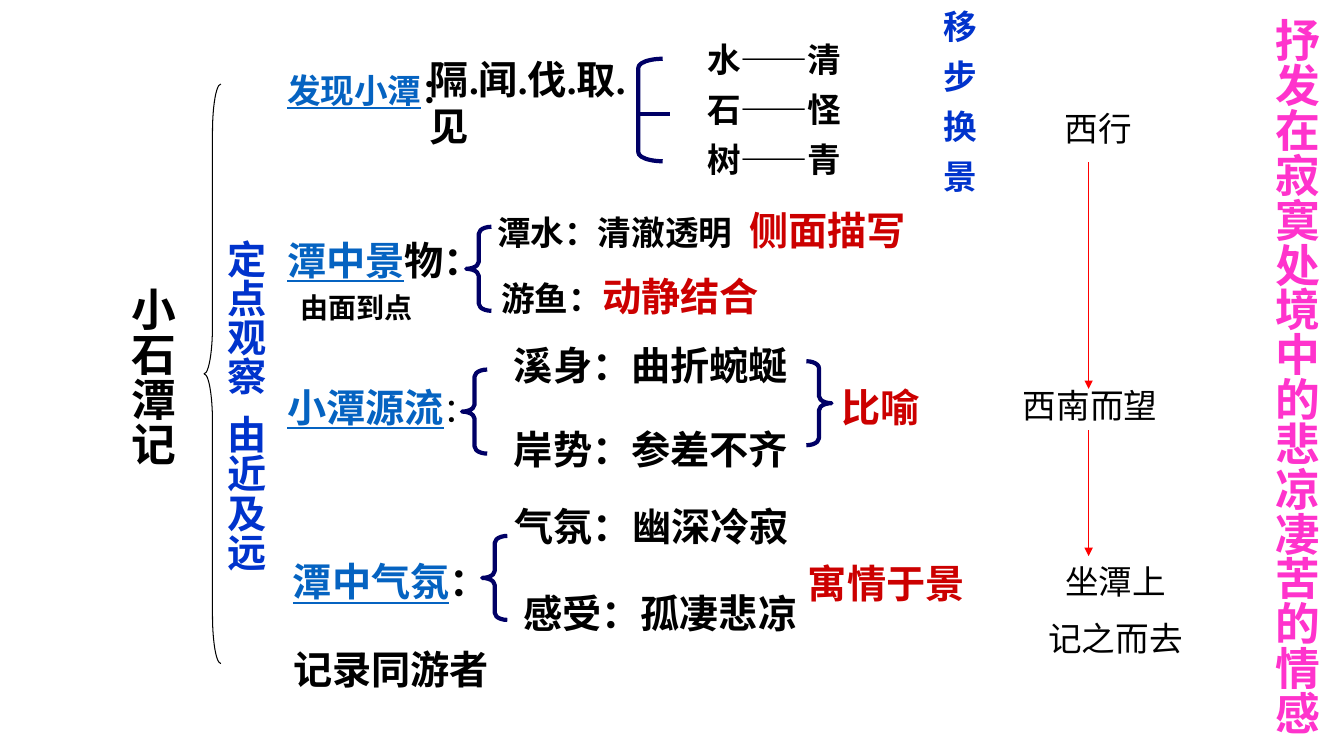
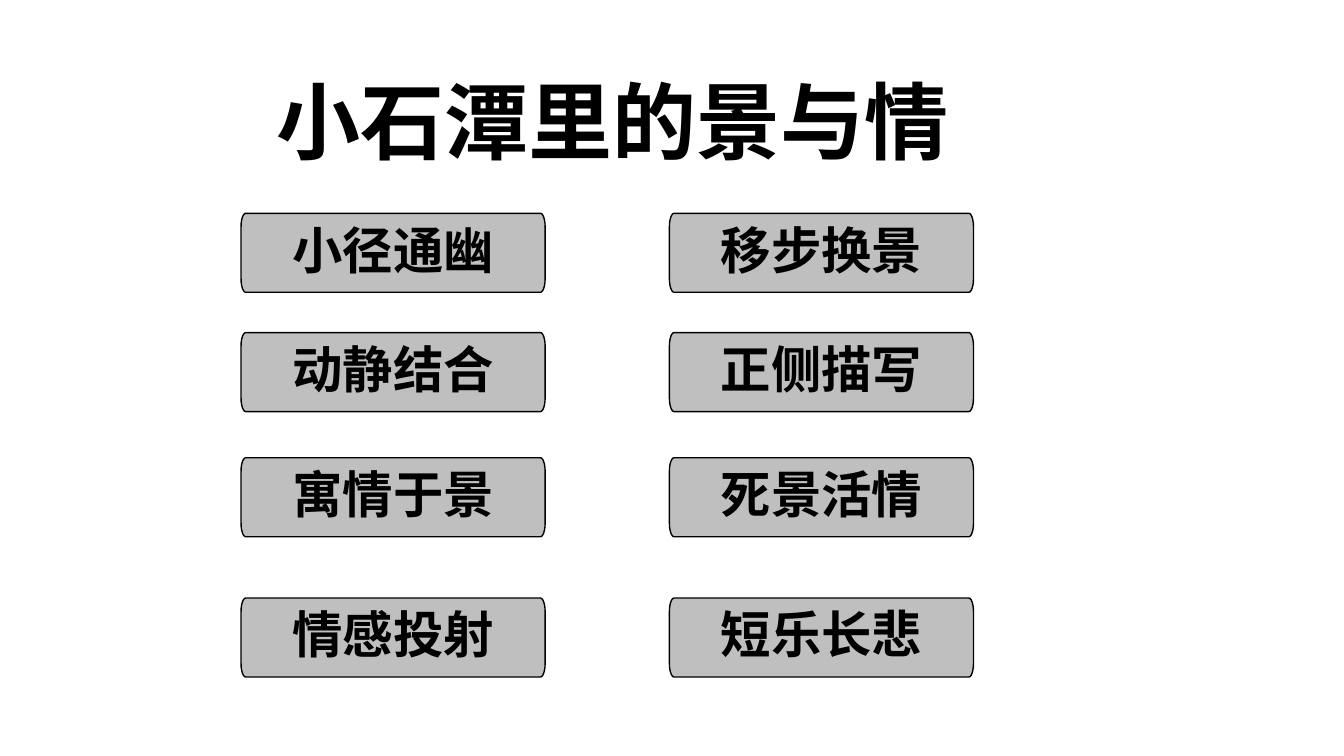
from dataclasses import dataclass
from math import cos, pi, sin

from lxml.etree import SubElement
from pptx import Presentation
from pptx.dml.color import RGBColor
from pptx.enum.shapes import MSO_CONNECTOR, MSO_SHAPE
from pptx.enum.text import MSO_ANCHOR, MSO_AUTO_SIZE, PP_ALIGN
from pptx.oxml.ns import qn
from pptx.slide import Slide
from pptx.util import Emu, Inches, Pt

# Slide size and grid: 160 columns by 90 rows
WIDTH, HEIGHT = Inches(13.333), Inches(7.5)
COL, ROW = WIDTH / 160, HEIGHT / 90

BLACK = RGBColor(0x00, 0x00, 0x00)
LINK = RGBColor(0x05, 0x63, 0xC1)
NAVY = RGBColor(0x00, 0x00, 0x66)
BLUE = RGBColor(0x00, 0x33, 0xCC)
DARK_RED = RGBColor(0xCC, 0x00, 0x00)
RED = RGBColor(0xFF, 0x00, 0x00)
PINK = RGBColor(0xFF, 0x33, 0xCC)
GREY = RGBColor(0xBF, 0xBF, 0xBF)

SERIF, SANS, CARD_FONT, TITLE_FONT = "Times New Roman", "Arial", "Calibri", "Noto Sans CJK JP"


@dataclass(frozen=True)
class Run:
    """A stretch of text; None keeps the paragraph's setting."""
    text: str
    color: RGBColor | None = None
    size: float | None = None
    font: str | None = None
    bold: bool | None = None
    underline: bool | None = None
    spacing: float = 0


@dataclass(frozen=True)
class Label:
    """A text box in grid columns and rows; each line is a list of runs."""
    col: float
    row: float
    cols: float
    rows: float
    lines: list[list[Run]]
    size: float = 28
    color: RGBColor = BLACK
    font: str = SERIF
    bold: bool = True
    align: PP_ALIGN = PP_ALIGN.LEFT
    vertical: bool = False
    wrap: bool = True


@dataclass(frozen=True)
class Bracket:
    kind: MSO_SHAPE
    col: float
    row: float
    cols: float = 3
    rows: float = 10
    bend: float = 0.278
    color: RGBColor = NAVY
    weight: float = 3


@dataclass(frozen=True)
class Line:
    col: float
    row: float
    end_col: float
    end_row: float
    color: RGBColor
    weight: float
    arrow: bool = False


@dataclass(frozen=True)
class Card:
    col: float
    row: float
    text: str


def x(cols: float) -> Emu:
    return Emu(round(cols * COL))


def y(rows: float) -> Emu:
    return Emu(round(rows * ROW))


def one(text: str, **style) -> list[list[Run]]:
    return [[Run(text, **style)]]


def link(text: str, rest: Run) -> list[list[Run]]:
    return [[Run(text, color=LINK, underline=True), rest]]


def add_label(s: Slide, label: Label) -> None:
    sp = s.shapes.add_textbox(x(label.col), y(label.row), x(label.cols), y(label.rows))
    tf = sp.text_frame
    tf.word_wrap = label.wrap
    tf.auto_size = MSO_AUTO_SIZE.SHAPE_TO_FIT_TEXT
    if label.vertical:
        tf._txBody.bodyPr.set("vert", "eaVert")
    for i, line in enumerate(label.lines):
        p = tf.add_paragraph() if i else tf.paragraphs[0]
        p.alignment = label.align
        if i:
            p.space_before = Pt(label.size / 2)
        p.font.name, p.font.size, p.font.bold = label.font, Pt(label.size), label.bold
        p.font.color.rgb = label.color
        for run in line:
            add_run(p, run)


def add_run(p, run: Run) -> None:
    r = p.add_run()
    r.text = run.text
    if run.color is not None:
        r.font.color.rgb = run.color
    if run.size is not None:
        r.font.size = Pt(run.size)
    if run.font is not None:
        r.font.name = run.font
    if run.bold is not None:
        r.font.bold = run.bold
    if run.underline is not None:
        r.font.underline = run.underline
    if run.spacing:
        r.font._element.set("spc", str(round(run.spacing * 100)))


def add_bracket(s: Slide, b: Bracket) -> None:
    sp = s.shapes.add_shape(b.kind, x(b.col), y(b.row), x(b.cols), y(b.rows))
    sp.adjustments[0] = b.bend
    sp.shadow.inherit = False
    sp.fill.background()
    sp.line.color.rgb, sp.line.width = b.color, Pt(b.weight)


def add_line(s: Slide, line: Line) -> None:
    c = s.shapes.add_connector(MSO_CONNECTOR.STRAIGHT, x(line.col), y(line.row),
                               x(line.end_col), y(line.end_row))
    c.line.color.rgb, c.line.width = line.color, Pt(line.weight)
    if line.arrow:
        SubElement(c.line._get_or_add_ln(), qn("a:tailEnd"), type="triangle")
    SubElement(c._element.spPr, qn("a:effectLst"))


def add_card(s: Slide, card: Card) -> None:
    # Corners are quarter ellipses, taller than they are wide
    w, h, rx, ry, steps = 36.2, 9.4, 0.55, 1.6, 6
    corners = [(rx, ry, pi), (w - rx, ry, 1.5 * pi), (w - rx, h - ry, 0), (rx, h - ry, pi / 2)]
    points = []
    for cx, cy, start in corners:
        for i in range(steps + 1):
            angle = start + i * pi / 2 / steps
            points.append((x(card.col + cx + rx * cos(angle)), y(card.row + cy + ry * sin(angle))))
    builder = s.shapes.build_freeform(*points[0])
    builder.add_line_segments(points[1:], close=True)
    sp = builder.convert_to_shape()
    sp.shadow.inherit = False
    sp.fill.solid()
    sp.fill.fore_color.rgb = GREY
    sp.line.color.rgb, sp.line.width = BLACK, Pt(1)
    tf = sp.text_frame
    tf.word_wrap = True
    tf.vertical_anchor = MSO_ANCHOR.MIDDLE
    tf.margin_left = tf.margin_right = tf.margin_top = tf.margin_bottom = Inches(0.14)
    p = tf.paragraphs[0]
    p.alignment, p.line_spacing = PP_ALIGN.CENTER, 0.9
    p.font.name, p.font.size, p.font.bold = CARD_FONT, Pt(36), True
    p.font.color.rgb = BLACK
    add_run(p, Run(card.text))


# Slide 1: outline of the essay
LABELS = [
    # Vertical headings
    Label(13, 33, 8.9, 33, one("小石潭记"), size=32, vertical=True),
    Label(24.7, 27.4, 8, 48, [[Run("定点观察"), Run(" ", spacing=7), Run("由近及远")]],
          color=BLUE, vertical=True),
    Label(109.9, 0, 7.3, 27.8, one("移步换景", spacing=11.8), size=24, color=BLUE, vertical=True),
    Label(149.2, 1, 8.9, 86, one("抒发在寂寞处境中的悲凉凄苦的情感"),
          size=32, color=PINK, font=SANS, vertical=True, wrap=False),
    # Sections
    Label(33, 7.7, 30, 6, link("发现小潭", Run("：")), size=24),
    Label(33, 27.5, 26.2, 6.8, link("潭中景", Run("物："))),
    Label(34.6, 34, 16, 5.3, one("由面到点"), size=20, font=CARD_FONT),
    Label(33, 45, 28, 6.8, link("小潭源流", Run("：", size=24, bold=False))),
    Label(33.7, 65.8, 28.3, 6.8, link("潭中气氛", Run("："))),
    Label(33.7, 76.2, 44, 6.8, one("记录同游者")),
    # Details
    Label(50, 6, 26.4, 12.4, one("隔.闻.伐.取.见")),
    Label(58, 24.6, 35, 6, one("潭水：清澈透明"), size=24),
    Label(58.5, 31.8, 46, 6.8, [[Run("游鱼：", size=24), Run("动静结合", color=DARK_RED)]]),
    Label(60, 40, 37, 6.8, one("溪身：曲折蜿蜒")),
    Label(60, 50, 37, 6.8, one("岸势：参差不齐")),
    Label(60.1, 59.2, 42, 6.8, one("气氛：幽深冷寂")),
    Label(61.1, 69.6, 36, 6.8, [[Run("感受："), Run("孤凄悲凉", font=SANS)]]),
    *(Label(83, 4 + 6 * i, 22, 6, one(text), size=24)
      for i, text in enumerate(["水——清", "石——怪", "树——青"])),
    # Techniques
    Label(88, 24, 25, 6.8, one("侧面描写"), color=DARK_RED),
    Label(99, 45, 19, 6.8, one("比喻"), color=DARK_RED),
    Label(95, 66, 22, 6.8, one("寓情于景"), color=DARK_RED),
    # Route
    Label(125.6, 12.2, 13, 6, one("西行"), size=24, font=SANS, bold=False),
    Label(120.6, 45.2, 21, 6, one("西南而望"), size=24, font=SANS, bold=False),
    Label(122.3, 66.2, 21, 13.3, [[Run("坐潭上")], [Run("记之而去")]],
          size=24, font=SANS, bold=False, align=PP_ALIGN.CENTER),
]
BRACKETS = [
    Bracket(MSO_SHAPE.LEFT_BRACE, 24.3, 10, 2, 69, bend=2.875, color=BLACK, weight=0.75),
    Bracket(MSO_SHAPE.LEFT_BRACKET, 76, 7, 2.9, 12.2, bend=0.362),
    Bracket(MSO_SHAPE.LEFT_BRACE, 55.5, 27),
    Bracket(MSO_SHAPE.LEFT_BRACE, 55, 44),
    Bracket(MSO_SHAPE.LEFT_BRACE, 57.4, 63.8),
    Bracket(MSO_SHAPE.RIGHT_BRACE, 96, 43),
]
LINES = [
    Line(76, 13.6, 79.8, 13.6, NAVY, 3),
    Line(129.6, 19.3, 129.6, 46.3, RED, 0.75, arrow=True),
    Line(129.6, 51.2, 129.6, 66.2, RED, 0.75, arrow=True),
]

# Slide 2: scenery and feeling
TITLE = Label(31.7, 7.7, 84.2, 13.3, one("小石潭里的景与情"), size=60, font=TITLE_FONT)
CARD_COLS = (28.7, 79.7)
CARD_ROWS = {
    25.4: ("小径通幽", "移步换景"),
    39.6: ("动静结合", "正侧描写"),
    54.5: ("寓情于景", "死景活情"),
    71.2: ("情感投射", "短乐长悲"),
}


def main() -> None:
    prs = Presentation()
    prs.slide_width, prs.slide_height = WIDTH, HEIGHT
    blank = prs.slide_layouts[6]

    s = prs.slides.add_slide(blank)
    for bracket in BRACKETS:
        add_bracket(s, bracket)
    for line in LINES:
        add_line(s, line)
    for label in LABELS:
        add_label(s, label)

    s = prs.slides.add_slide(blank)
    add_label(s, TITLE)
    for row, texts in CARD_ROWS.items():
        for col, text in zip(CARD_COLS, texts):
            add_card(s, Card(col, row, text))

    prs.save("out.pptx")


if __name__ == "__main__":
    main()
